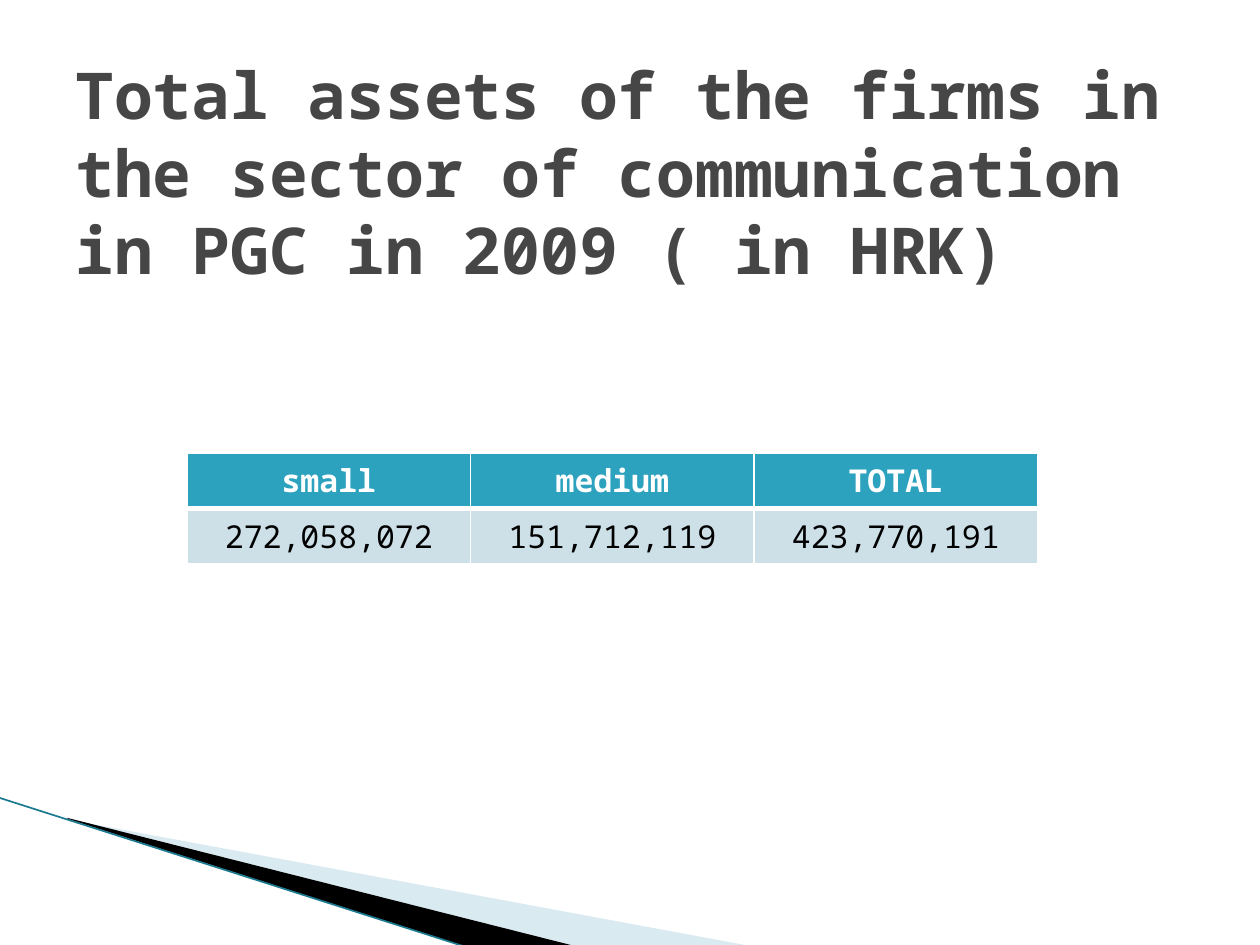
import pptx
import pptx.util
import pptx.dml.color
import pptx.enum.shapes
import pptx.enum.text
import pptx.oxml
import pptx.oxml.ns
from lxml import etree

Pt = pptx.util.Pt
qn = pptx.oxml.ns.qn
FONT = "Noto Sans Mono"


def rgb(value):
    return pptx.dml.color.RGBColor.from_string(value)


def style(p, size, color, bold):
    for r in p.runs:
        r.font.name = FONT
        r.font.size = Pt(size)
        r.font.bold = bold
        r.font.color.rgb = rgb(color)


prs = pptx.Presentation()
prs.slide_width = Pt(720)
prs.slide_height = Pt(540)
s = prs.slides.add_slide(prs.slide_layouts[6])

wedges = [
    ([(39.6, 468.5), (428.4, 540.5), (328.5, 540.5), (39.6, 468)],
     (56.2, 393.8, 299.5, 113.8), "A0CBDC", 40),
    ([(38.2, 467.3), (329, 540.7), (267.8, 541.4), (38.9, 468)],
     (-4.3, 455.8, 299.5, 66.2), "000000", 100),
]
for points, frame, color, opacity in wedges:
    builder = s.shapes.build_freeform(Pt(points[0][0]), Pt(points[0][1]))
    builder.add_line_segments([(Pt(x), Pt(y)) for x, y in points[1:]], close=True)
    sp = builder.convert_to_shape()
    left, top, width, height = [Pt(v) for v in frame]
    outline = next(sp._element.iter(qn("a:path")))
    outline.set("w", str(width))
    outline.set("h", str(height))
    for point in outline.iter(qn("a:pt")):
        point.set("x", str(int(point.get("x")) + sp.left - left))
        point.set("y", str(int(point.get("y")) + sp.top - top))
    sp.left, sp.top, sp.width, sp.height = left, top, width, height
    sp.shadow.inherit = False
    sp.fill.solid()
    sp.fill.fore_color.rgb = rgb(color)
    sp.line.fill.background()
    if opacity < 100:
        fill_color = sp.fill._xPr.find(qn("a:solidFill"))[0]
        etree.SubElement(fill_color, qn("a:alpha"), val=str(opacity * 1000))

edge = s.shapes.add_connector(
    pptx.enum.shapes.MSO_CONNECTOR.STRAIGHT, Pt(-0.7), Pt(455.8), Pt(267.1), Pt(541.4))
edge.line.color.rgb = rgb("1B7A8F")
edge.line.width = Pt(0.95)
etree.SubElement(edge._element.spPr, qn("a:effectLst"))

rows = [["small", "medium", "TOTAL"], ["272,058,072", "151,712,119", "423,770,191"]]
row_styles = [("2DA2BF", "FFFFFF", True, 1, 3), ("CDE0E8", "000000", False, 3, 1)]
table = s.shapes.add_table(2, 3, Pt(106.9), Pt(258.8), Pt(486), Pt(58.4)).table
for column in table.columns:
    column.width = Pt(162)
for i, (values, row_style) in enumerate(zip(rows, row_styles)):
    fill, color, bold, top, bottom = row_style
    table.rows[i].height = Pt(29.2)
    for j, value in enumerate(values):
        cell = table.cell(i, j)
        cell.text_frame.text = value
        p = cell.text_frame.paragraphs[0]
        p.alignment = pptx.enum.text.PP_ALIGN.CENTER
        style(p, 18, color, bold)
        cell.fill.solid()
        cell.fill.fore_color.rgb = rgb(fill)
        borders = [("L", 1), ("R", 1), ("T", top), ("B", bottom)]
        for k, (side, width) in enumerate(borders):
            ln = etree.Element(qn("a:ln" + side), w=str(Pt(width)))
            solid = etree.SubElement(ln, qn("a:solidFill"))
            etree.SubElement(solid, qn("a:srgbClr"), val="FFFFFF")
            cell._tc.get_or_add_tcPr().insert(k, ln)

title = s.shapes.add_textbox(Pt(36), Pt(84.2), Pt(648), Pt(27.4))
tf = title.text_frame
tf.word_wrap = True
tf.vertical_anchor = pptx.enum.text.MSO_ANCHOR.MIDDLE
tf.text = "Total assets of the firms in the sector of communication in PGC in 2009 ( in HRK)"
style(tf.paragraphs[0], 36.9, "464646", True)

prs.save("out.pptx")
